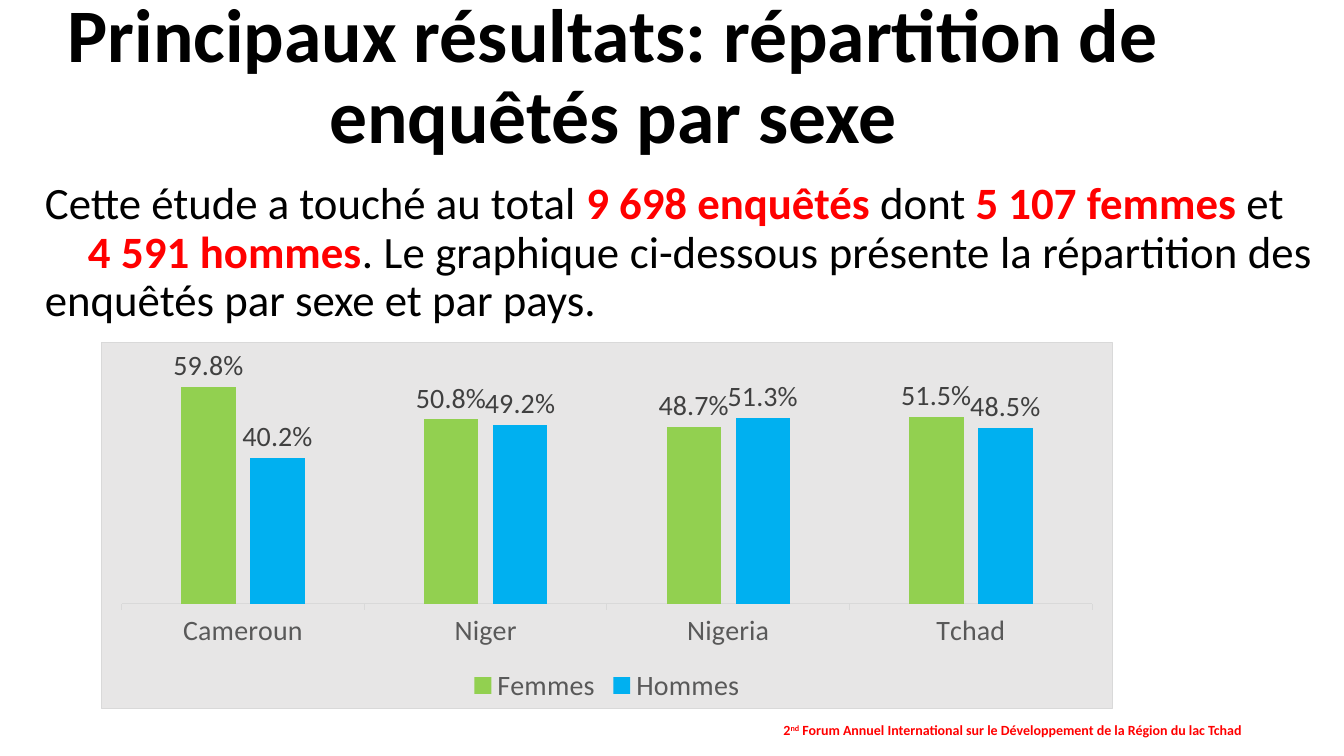
import dataclasses

import lxml.etree
import pptx
import pptx.chart.data
import pptx.dml.color
import pptx.enum.chart
import pptx.enum.text
import pptx.oxml
import pptx.oxml.ns
import pptx.util

EMU_PER_PX = 914400 / 100.8


@dataclasses.dataclass(frozen=True)
class Theme:
    font: str = "Calibri"
    text: str = "000000"
    accent: str = "FF0000"
    panel: str = "E7E6E6"
    rule: str = "D9D9D9"
    axis_text: str = "595959"
    label_text: str = "404040"
    women: str = "92D050"
    men: str = "00B0F0"
    title_size: int = 54
    body_size: int = 32
    chart_size: int = 20
    footer_size: int = 10


THEME = Theme()
ALIGN = pptx.enum.text.PP_ALIGN
ANCHOR = pptx.enum.text.MSO_ANCHOR


def px(length):
    return pptx.util.Emu(round(length * EMU_PER_PX))


def rgb(value):
    return pptx.dml.color.RGBColor.from_string(value)


def apply(target, values):
    for name, value in values.items():
        setattr(target, name, value)


def style_font(font, size, color, bold=False):
    apply(font, {"name": THEME.font, "size": pptx.util.Pt(size), "bold": bold})
    font.color.rgb = rgb(color)


def add_text_frame(slide, box, anchor):
    frame = slide.shapes.add_textbox(*map(px, box)).text_frame
    apply(frame, {"word_wrap": True, "vertical_anchor": anchor})
    return frame


def add_run(paragraph, text, size, color, bold):
    run = paragraph.add_run()
    run.text = text
    style_font(run.font, size, color, bold)
    return run


def add_title(slide, box):
    paragraph = add_text_frame(slide, box, ANCHOR.MIDDLE).paragraphs[0]
    apply(paragraph, {"alignment": ALIGN.CENTER, "line_spacing": 0.9})
    title = "Principaux résultats: répartition de enquêtés par sexe"
    add_run(paragraph, title, THEME.title_size, THEME.text, True)


def add_summary(slide, box):
    """Add the introduction; highlighted pieces are flagged True."""
    frame = add_text_frame(slide, box, ANCHOR.TOP)
    opening = [
        ("Cette étude a touché au total ", False),
        ("9 698 enquêtés ", True),
        ("dont ", False),
        ("5 107 femmes ", True),
        ("et", False),
    ]
    continuation = [
        ("4 591 hommes", True),
        (". Le graphique ci-dessous présente la répartition des "
         "enquêtés par sexe et par pays.", False),
    ]
    paragraphs = [frame.paragraphs[0], frame.add_paragraph()]
    for paragraph, pieces in zip(paragraphs, (opening, continuation)):
        apply(paragraph, {"alignment": ALIGN.JUSTIFY, "line_spacing": 0.9,
                          "space_before": pptx.util.Pt(0)})
        for text, highlighted in pieces:
            color = THEME.accent if highlighted else THEME.text
            add_run(paragraph, text, THEME.body_size, color, highlighted)
    paragraphs[1]._p.get_or_add_pPr().set("indent", str(px(43)))


def add_footer(slide, box):
    frame = add_text_frame(slide, box, ANCHOR.MIDDLE)
    paragraph = frame.paragraphs[0]
    paragraph.alignment = ALIGN.CENTER
    event = " Forum Annuel International sur le Développement de la Région du lac Tchad"
    for text, baseline in (("2", 0), ("nd", 30000), (event, 0)):
        run = add_run(paragraph, text, THEME.footer_size, THEME.accent, True)
        if baseline:
            run._r.get_or_add_rPr().set("baseline", str(baseline))


def fill_chart_area(chart):
    """Give the whole chart its panel fill and thin border."""
    area = pptx.oxml.parse_xml(
        f'<c:spPr {pptx.oxml.ns.nsdecls("c", "a")}>'
        f'<a:solidFill><a:srgbClr val="{THEME.panel}"/></a:solidFill>'
        f'<a:ln w="9525"><a:solidFill><a:srgbClr val="{THEME.rule}"/>'
        '</a:solidFill></a:ln></c:spPr>')
    chart._chartSpace.chart.addnext(area)


def style_axes(chart):
    category_axis, value_axis = chart.category_axis, chart.value_axis
    style_font(category_axis.tick_labels.font, THEME.chart_size, THEME.axis_text)
    category_axis.major_tick_mark = pptx.enum.chart.XL_TICK_MARK.OUTSIDE
    category_axis.format.line.color.rgb = rgb(THEME.rule)
    category_axis.format.line.width = pptx.util.Pt(0.75)
    apply(value_axis, {"visible": False, "has_major_gridlines": False,
                       "minimum_scale": 0, "maximum_scale": 0.7})


def style_series(series, color):
    series.format.fill.solid()
    series.format.fill.fore_color.rgb = rgb(color)
    labels = series.data_labels
    apply(labels, {
        "show_value": True,
        "number_format": "0.0%",
        "number_format_is_linked": False,
        "position": pptx.enum.chart.XL_LABEL_POSITION.OUTSIDE_END,
    })
    style_font(labels.font, THEME.chart_size, THEME.label_text)


def add_sex_chart(slide, box):
    data = pptx.chart.data.CategoryChartData(number_format="0.0%")
    data.categories = ["Cameroun", "Niger", "Nigeria", "Tchad"]
    data.add_series("Femmes", [0.598, 0.508, 0.487, 0.515])
    data.add_series("Hommes", [0.402, 0.492, 0.513, 0.485])
    chart = slide.shapes.add_chart(
        pptx.enum.chart.XL_CHART_TYPE.COLUMN_CLUSTERED, *map(px, box), data).chart
    style_font(chart.font, THEME.footer_size, THEME.text)
    apply(chart, {"has_title": False, "has_legend": True})
    apply(chart.legend, {"include_in_layout": False,
                         "position": pptx.enum.chart.XL_LEGEND_POSITION.BOTTOM})
    style_font(chart.legend.font, THEME.chart_size, THEME.axis_text)
    plot = chart.plots[0]
    apply(plot, {"gap_width": 219, "overlap": -27, "vary_by_categories": False})
    for series, color in zip(plot.series, (THEME.women, THEME.men)):
        style_series(series, color)
    style_axes(chart)
    fill_chart_area(chart)


def main():
    presentation = pptx.Presentation()
    apply(presentation, {"slide_width": px(1344), "slide_height": px(756)})
    slide = presentation.slides.add_slide(presentation.slide_layouts[6])
    add_footer(slide, (737, 716, 551, 28))
    add_title(slide, (21, 37, 1184, 83))
    add_summary(slide, (35, 176, 1288, 157))
    add_sex_chart(slide, (101, 342, 1012, 367))
    presentation.save("out.pptx")


if __name__ == "__main__":
    main()
